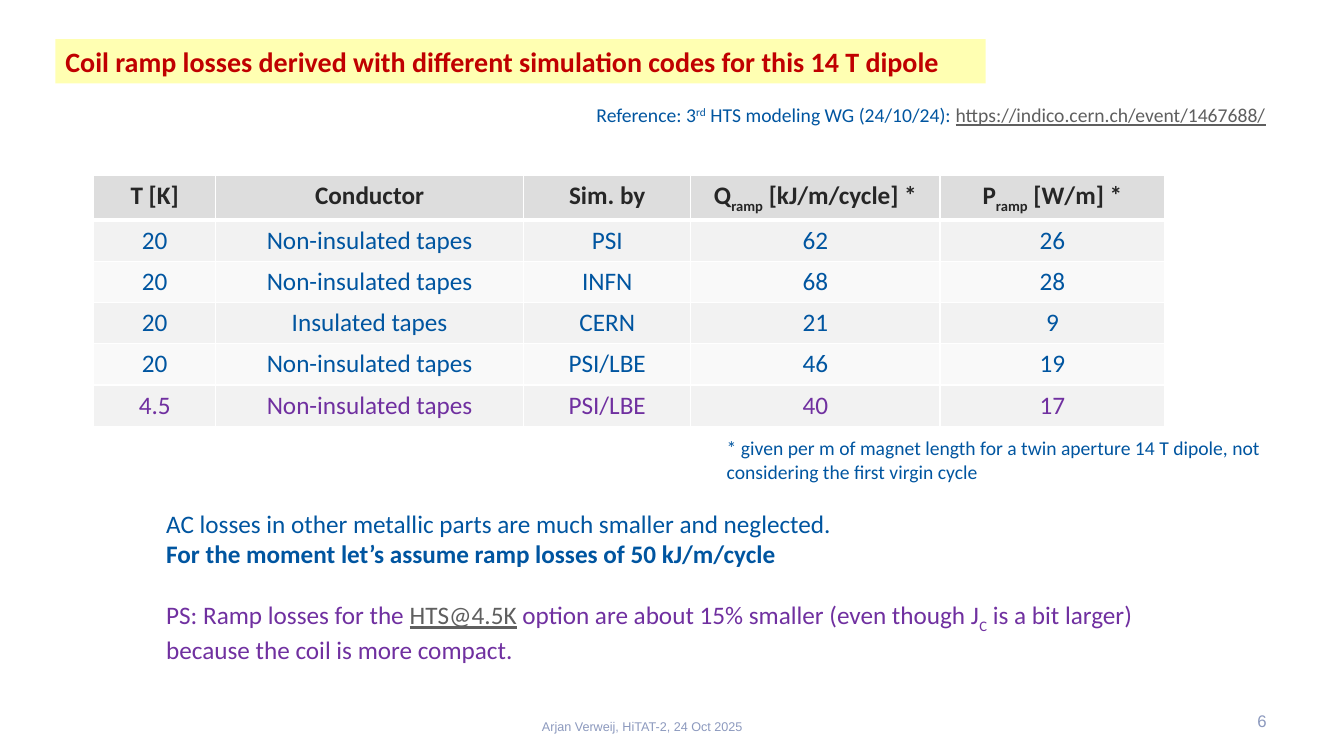
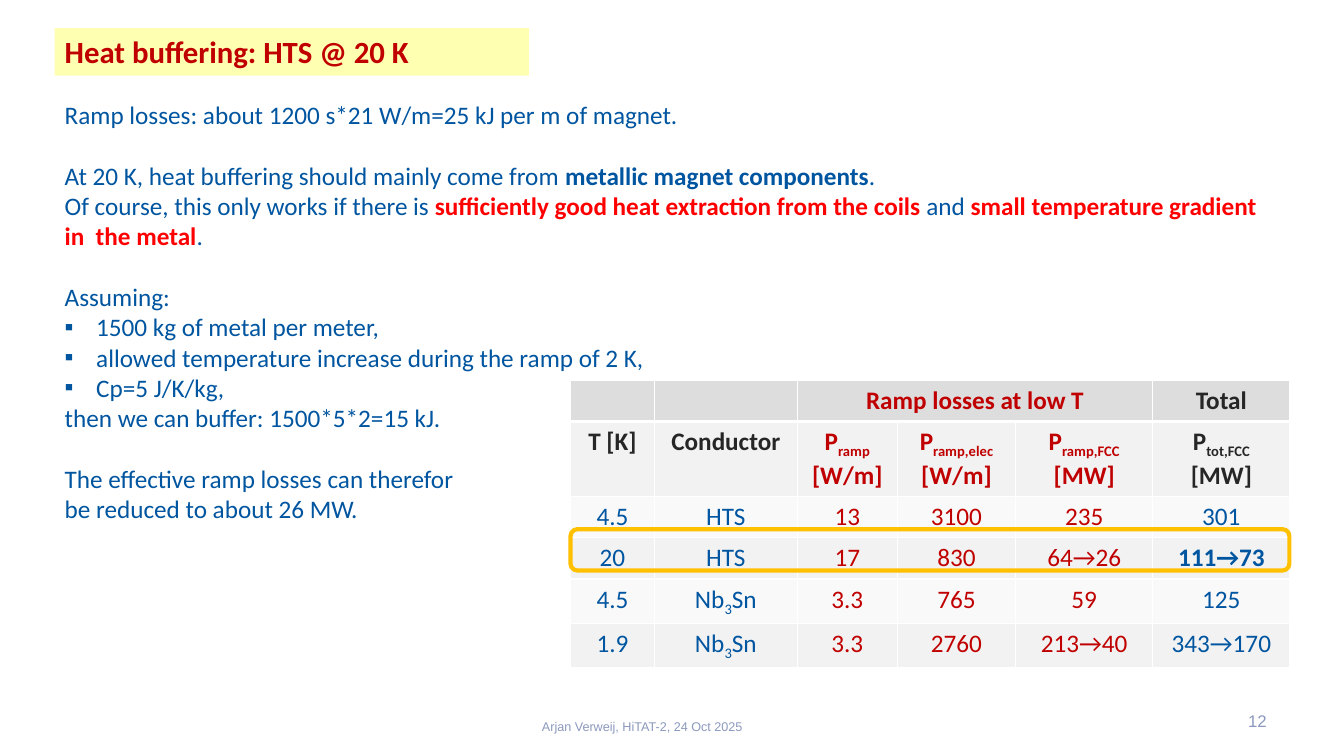
"""Build two slides on ramp losses and heat buffering in a 14 T dipole."""
from lxml import etree
from pptx import Presentation
from pptx.dml.color import RGBColor
from pptx.enum import shapes, text
from pptx.oxml import ns
from pptx.util import Pt

BLUE, RED, PURPLE, DARK, GREY = "0055A0", "C00000", "7030A0", "262626", "5F5F5F"
BRIGHT, YELLOW, AMBER, MUTED, WHITE = "FF0000", "FFFF00", "FFC000", "8C99BE", "FFFFFF"
HEAD_FILL, BAND_FILLS = "DDDDDD", ("F9F9F9", "F2F2F2")
FOOTER = "Arjan Verweij, HiTAT-2, 24 Oct 2025"
SIZE, LINE, INDENT, ROW_H = 18, 22, 22.5, 29.5
LEFT, CENTER, RIGHT = text.PP_ALIGN.LEFT, text.PP_ALIGN.CENTER, text.PP_ALIGN.RIGHT

LINK = dict(color=GREY, underline=True)
STRESS = dict(color=BRIGHT, bold=True)
GAP, BULLET = dict(before=LINE), dict(bullet="▪")

LOSSES = {
    "number": "6",
    "title": ("Coil ramp losses derived with different simulation codes for this 14 T dipole",
              (39.5, 28, 664.5, 31.5), 20),
    "box": (111.5, 359.5, 744, 116.5),
    "body": [
        (["AC losses in other metallic parts are much smaller and neglected."], {}),
        ([("For the moment let’s assume ramp losses of 50 kJ/m/cycle", dict(bold=True))], {}),
        (["PS: Ramp losses for the ", ("HTS@4.5K", LINK),
          " option are about 15% smaller (even though J_C_ is a bit larger) "
          "because the coil is more compact."], dict(GAP, color=PURPLE)),
    ],
    "table": dict(
        left=67, top=125.5, widths=(87, 220, 119.5, 178, 160.5), row_colors={5: PURPLE},
        rows=[
            ("T [K]", "Conductor", "Sim. by", "Q_ramp_ [kJ/m/cycle] *", "P_ramp_ [W/m] *"),
            ("20", "Non-insulated tapes", "PSI", "62", "26"),
            ("20", "Non-insulated tapes", "INFN", "68", "28"),
            ("20", "Insulated tapes", "CERN", "21", "9"),
            ("20", "Non-insulated tapes", "PSI/LBE", "46", "19"),
            ("4.5", "Non-insulated tapes", "PSI/LBE", "40", "17"),
        ]),
    "notes": [
        ((512, 308, 417, 41),
         ["* given per m of magnet length for a twin aperture 14 T dipole, "
          "not considering the first virgin cycle"]),
        ((419, 70, 520.5, 24.5),
         ["Reference: 3", ("rd", dict(baseline=30)), " HTS modeling WG (24/10/24): ",
          ("https://indico.cern.ch/event/1467688/", LINK)]),
    ],
}

BUFFERING = {
    "number": "12",
    "title": ("Heat buffering: HTS @ 20 K", (39, 20, 339, 34), 22),
    "box": (39, 67, 877.5, 312.5),
    "body": [
        (["Ramp losses: about 1200 s*21 W/m=25 kJ per m of magnet."], {}),
        (["At 20 K, heat buffering should mainly come from ",
          ("metallic magnet components", dict(bold=True)), "."], GAP),
        (["Of course, this only works if there is ",
          ("sufficiently good heat extraction from the coils ", STRESS), "and",
          (" small temperature gradient in  the metal", STRESS), "."], {}),
        (["Assuming:"], GAP),
        (["1500 kg of metal per meter,"], BULLET),
        (["allowed temperature increase during the ramp of 2 K,"], BULLET),
        (["Cp=5 J/K/kg,"], BULLET),
        (["then we can buffer: 1500*5*2=15 kJ."], {}),
        (["The effective ramp losses can therefor"], GAP),
        (["be reduced to about 26 MW."], {}),
    ],
    "table": dict(
        left=407.5, top=271.5, widths=(60, 102, 71.5, 84.5, 98, 98), heads=2,
        red_cols=(2, 3, 4), merge=(2, 4), bold_cells=((3, 5),),
        rows=[
            ("", "", "Ramp losses at low T", "", "", "Total"),
            ("T [K]", "Conductor", "P_ramp_ [W/m]", "P_ramp,elec_ [W/m]",
             "P_ramp,FCC_\n[MW]", "P_tot,FCC_\n[MW]"),
            ("4.5", "HTS", "13", "3100", "235", "301"),
            ("20", "HTS", "17", "830", "64→26", "111→73"),
            ("4.5", "Nb_3_Sn", "3.3", "765", "59", "125"),
            ("1.9", "Nb_3_Sn", "3.3", "2760", "213→40", "343→170"),
        ]),
    "frame": (407.5, 378, 513.5, 29.5),
}


def rgb(value):
    return RGBColor.from_string(value)


def sub(parent, tag, **attrs):
    return etree.SubElement(parent, ns.qn(tag), {k: str(v) for k, v in attrs.items()})


def add_run(p, words, size=SIZE, color=BLUE, bold=False, underline=False,
            font="Calibri", baseline=0):
    r = p.add_run()
    r.text = words
    f = r.font
    f.name, f.size, f.bold, f.underline = font, Pt(size), bold, underline
    f.color.rgb = rgb(color)
    if baseline:
        r._r.get_or_add_rPr().set("baseline", str(baseline * 1000))


def write(p, parts, align=LEFT, before=0, bullet=None, **fmt):
    """Fill a paragraph; words between underscores become subscripts."""
    pPr = p._p.get_or_add_pPr()
    pPr.set("marL", str(Pt(INDENT if bullet else 0)))
    pPr.set("indent", str(Pt(-INDENT if bullet else 0)))
    if bullet:
        sub(pPr, "a:buFont", typeface="Arial")
        sub(pPr, "a:buChar", char=bullet)
    else:
        sub(pPr, "a:buNone")
    p.alignment, p.space_before = align, Pt(before)
    for part in parts:
        words, own = (part, {}) if isinstance(part, str) else part
        for i, piece in enumerate(words.split("_")):
            if piece:
                add_run(p, piece, **{**fmt, **({"baseline": -25} if i % 2 else {}), **own})


def fill_frame(tf, paragraphs, anchor=text.MSO_ANCHOR.TOP):
    tf.word_wrap, tf.auto_size, tf.vertical_anchor = True, text.MSO_AUTO_SIZE.NONE, anchor
    for i, (parts, fmt) in enumerate(paragraphs):
        write(tf.add_paragraph() if i else tf.paragraphs[0], parts, **fmt)


def place(sp, box):
    sp.left, sp.top, sp.width, sp.height = map(Pt, box)


def add_text(s, box, parts, anchor=text.MSO_ANCHOR.TOP, **fmt):
    sp = s.shapes.add_textbox(*map(Pt, box))
    fill_frame(sp.text_frame, [(parts, fmt)], anchor)


def add_title(s, words, box, size):
    sp = s.shapes.title
    place(sp, box)
    sp.fill.solid()
    sp.fill.fore_color.rgb = rgb(YELLOW)
    color = sp._element.spPr.find(".//" + ns.qn("a:srgbClr"))
    sub(color, "a:alpha", val=30000)
    fill_frame(sp.text_frame, [([words], dict(size=size, color=RED, bold=True))])


def add_borders(cell, bottom):
    tcPr = cell._tc.get_or_add_tcPr()
    for side, width in zip("LRTB", (1, 1, 1, bottom)):
        ln = sub(tcPr, "a:ln" + side, w=Pt(width))
        sub(sub(ln, "a:solidFill"), "a:srgbClr", val=WHITE)


def add_table(s, left, top, widths, rows, heads=1, red_cols=(), row_colors=None,
              merge=None, bold_cells=()):
    table = s.shapes.add_table(len(rows), len(widths), Pt(left), Pt(top),
                               Pt(sum(widths)), Pt(ROW_H * len(rows))).table
    table.first_row = table.horz_banding = False
    for col, width in zip(table.columns, widths):
        col.width = Pt(width)
    if merge:
        table.cell(0, merge[0]).merge(table.cell(0, merge[1]))
    for i, row in enumerate(rows):
        table.rows[i].height = Pt(ROW_H)
        base = DARK if i < heads else (row_colors or {}).get(i, BLUE)
        for j, words in enumerate(row):
            cell = table.cell(i, j)
            add_borders(cell, 1 if i else 3)
            cell.fill.solid()
            cell.fill.fore_color.rgb = rgb(BAND_FILLS[i % 2] if i else HEAD_FILL)
            fmt = dict(align=CENTER, color=RED if j in red_cols else base,
                       bold=i < heads or (i, j) in bold_cells)
            if words:
                fill_frame(cell.text_frame, [([line], fmt) for line in words.split("\n")])


def add_frame(s, box):
    sp = s.shapes.add_shape(shapes.MSO_SHAPE.ROUNDED_RECTANGLE, *map(Pt, box))
    sp.shadow.inherit = False
    sp.fill.background()
    sp.line.color.rgb, sp.line.width = rgb(AMBER), Pt(3)


def add_slide(prs, data):
    s = prs.slides.add_slide(prs.slide_layouts[1])
    add_title(s, *data["title"])
    body = s.placeholders[1]
    place(body, data["box"])
    fill_frame(body.text_frame, data["body"])
    add_table(s, **data["table"])
    for box, parts in data.get("notes", ()):
        add_text(s, box, parts, size=14)
    if "frame" in data:
        add_frame(s, data["frame"])
    small = dict(anchor=text.MSO_ANCHOR.MIDDLE, font="Arial", color=MUTED)
    add_text(s, (380, 509, 183.5, 20), [FOOTER], size=9, **small)
    add_text(s, (859.5, 500.5, 52.5, 29), [data["number"]], size=12, align=RIGHT, **small)


def main():
    prs = Presentation()
    prs.slide_width, prs.slide_height = Pt(960), Pt(540)
    for data in (LOSSES, BUFFERING):
        add_slide(prs, data)
    prs.save("out.pptx")


if __name__ == "__main__":
    main()
